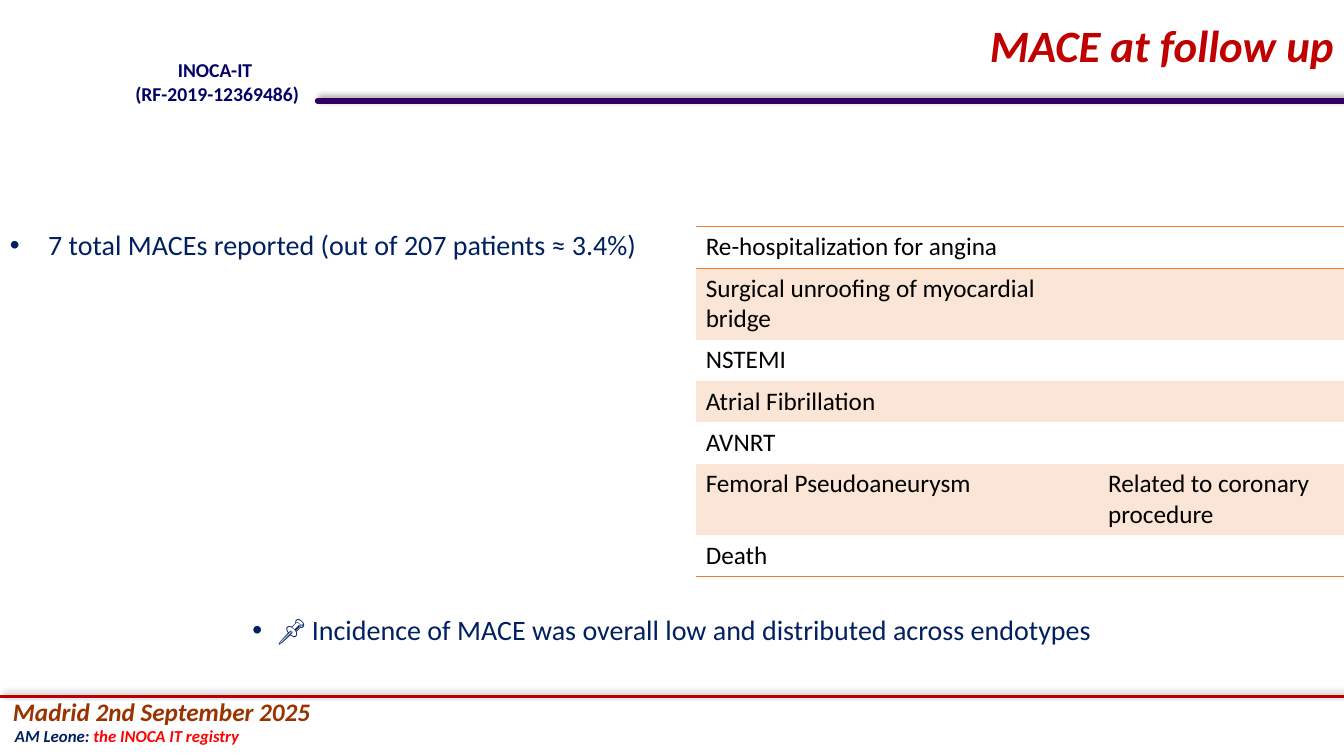
"""Build the slide on MACE at follow up in the INOCA-IT registry."""
from lxml.etree import SubElement
from pptx import Presentation
from pptx.dml.color import RGBColor
from pptx.enum.shapes import MSO_CONNECTOR
from pptx.enum.text import MSO_ANCHOR, MSO_AUTO_SIZE, PP_ALIGN
from pptx.oxml.ns import qn
from pptx.util import Inches, Pt

NAVY, RED, ORANGE, PEACH = "002060", "C00000", "ED7D31", "FBE5D6"
SLIDE_W, SLIDE_H = 13.33, 7.5
TABLE_LEFT, BODY_TOP, LINE_H, WRAPPED_H = 6.9, 2.25, 0.41, 0.71


def add_node(parent, tag, **attributes):
    return SubElement(parent, qn(tag), {key: str(value) for key, value in attributes.items()})


def add_span(para, text, size, color, bold=False, italic=False):
    span = para.add_run()
    span.text = text
    font = span.font
    font.name, font.size, font.bold, font.italic = "Calibri", Pt(size), bold, italic
    font.color.rgb = RGBColor.from_string(color)


deck = Presentation()
deck.slide_width, deck.slide_height = Inches(SLIDE_W), Inches(SLIDE_H)
page = deck.slides.add_slide(deck.slide_layouts[5])

rules = [
    (3.15, SLIDE_W, 1, "32005C", 4, "rnd"),
    (SLIDE_W, 0, 6.91, RED, 2, "flat"),
]
for start, end, height, color, weight, cap in rules:
    rule = page.shapes.add_connector(
        MSO_CONNECTOR.STRAIGHT, Inches(start), Inches(height), Inches(end), Inches(height))
    rule.line.color.rgb = RGBColor.from_string(color)
    rule.line.width = Pt(weight)
    properties = rule.element.spPr
    properties.find(qn("a:ln")).set("cap", cap)
    effects = add_node(properties, "a:effectLst")
    shadow = add_node(effects, "a:outerShdw", blurRad=Pt(4), dist=Pt(3), dir=315 * 60000)
    shade = add_node(shadow, "a:srgbClr", val="000000")
    add_node(shade, "a:alpha", val=40000)

title = page.shapes.title
title.left, title.top, title.width, title.height = map(Inches, (7.69, 0.19, 5.64, 0.9))
title.text_frame.vertical_anchor = MSO_ANCHOR.TOP
title.text_frame.auto_size = MSO_AUTO_SIZE.NONE
title.text_frame.word_wrap = True
heading = title.text_frame.paragraphs[0]
heading.alignment, heading.line_spacing = PP_ALIGN.RIGHT, 0.9
add_span(heading, "MACE at follow up", 32, RED, True, True)

texts = [
    ((0.03, 6.86, 11.91, 0.4), PP_ALIGN.LEFT, 0,
     [[("Madrid 2nd September 2025", 18, "993300", True, True)]]),
    ((0.05, 7.15, 11.91, 0.35), PP_ALIGN.LEFT, 0,
     [[("AM Leone:", 12, NAVY, True, True),
       (" the INOCA IT registry", 12, "FF0000", True, True)]]),
    ((0.96, 0.53, 2.39, 0.81), PP_ALIGN.CENTER, 0,
     [[("INOCA-IT ", 14, "000066", True)], [("(RF-2019-12369486)", 14, "000066", True)]]),
    ((0, BODY_TOP, 7.4, 3.32), PP_ALIGN.LEFT, 0.38,
     [[("7 total MACEs reported (out of 207 patients ≈ 3.4%)", 20, NAVY)]]),
    ((0, 6.07, SLIDE_W, 0.9), PP_ALIGN.CENTER, 0.25,
     [[("📌 Incidence of MACE was overall low and distributed across endotypes", 20, NAVY)]]),
]
for place, alignment, indent, lines in texts:
    frame = page.shapes.add_textbox(*map(Inches, place)).text_frame
    frame.word_wrap = True
    for index, spans in enumerate(lines):
        para = frame.add_paragraph() if index else frame.paragraphs[0]
        para.alignment = alignment
        if indent:
            settings = para._p.get_or_add_pPr()
            settings.set("marL", str(Inches(indent)))
            settings.set("indent", str(-Inches(indent)))
            add_node(settings, "a:buFont", typeface="Arial")
            add_node(settings, "a:buChar", char="•")
            para.line_spacing = 0.9
        for span in spans:
            add_span(para, *span)

events = [
    ("Re-hospitalization for angina", "", LINE_H),
    ("Surgical unroofing of myocardial bridge", "", WRAPPED_H),
    ("NSTEMI", "", LINE_H),
    ("Atrial Fibrillation", "", LINE_H),
    ("AVNRT", "", LINE_H),
    ("Femoral Pseudoaneurysm", "Related to coronary procedure", WRAPPED_H),
    ("Death", "", LINE_H),
]
column_widths = (3.99, 2.45)
holder = page.shapes.add_table(
    len(events), 2, Inches(TABLE_LEFT), Inches(BODY_TOP),
    Inches(sum(column_widths)), Inches(sum(event[2] for event in events)))
table = holder.table
table.first_row = table.horz_banding = False
for style in holder.element.iter(qn("a:tableStyleId")):
    style.text = "{2D5ABB26-0587-4C30-8999-92F81FD0307C}"
for column, width in zip(table.columns, column_widths):
    column.width = Inches(width)

edges = {0: ("a:lnT", "a:lnB"), len(events) - 1: ("a:lnB",)}
for row, (event, remark, height) in enumerate(events):
    table.rows[row].height = Inches(height)
    for column, text in enumerate((event, remark)):
        cell = table.cell(row, column)
        for edge in edges.get(row, ()):
            border = add_node(cell._tc.get_or_add_tcPr(), edge, w=Pt(1))
            add_node(add_node(border, "a:solidFill"), "a:srgbClr", val=ORANGE)
        if row % 2:
            cell.fill.solid()
            cell.fill.fore_color.rgb = RGBColor.from_string(PEACH)
        else:
            cell.fill.background()
        if text:
            add_span(cell.text_frame.paragraphs[0], text, 18, "000000")

deck.save("out.pptx")
